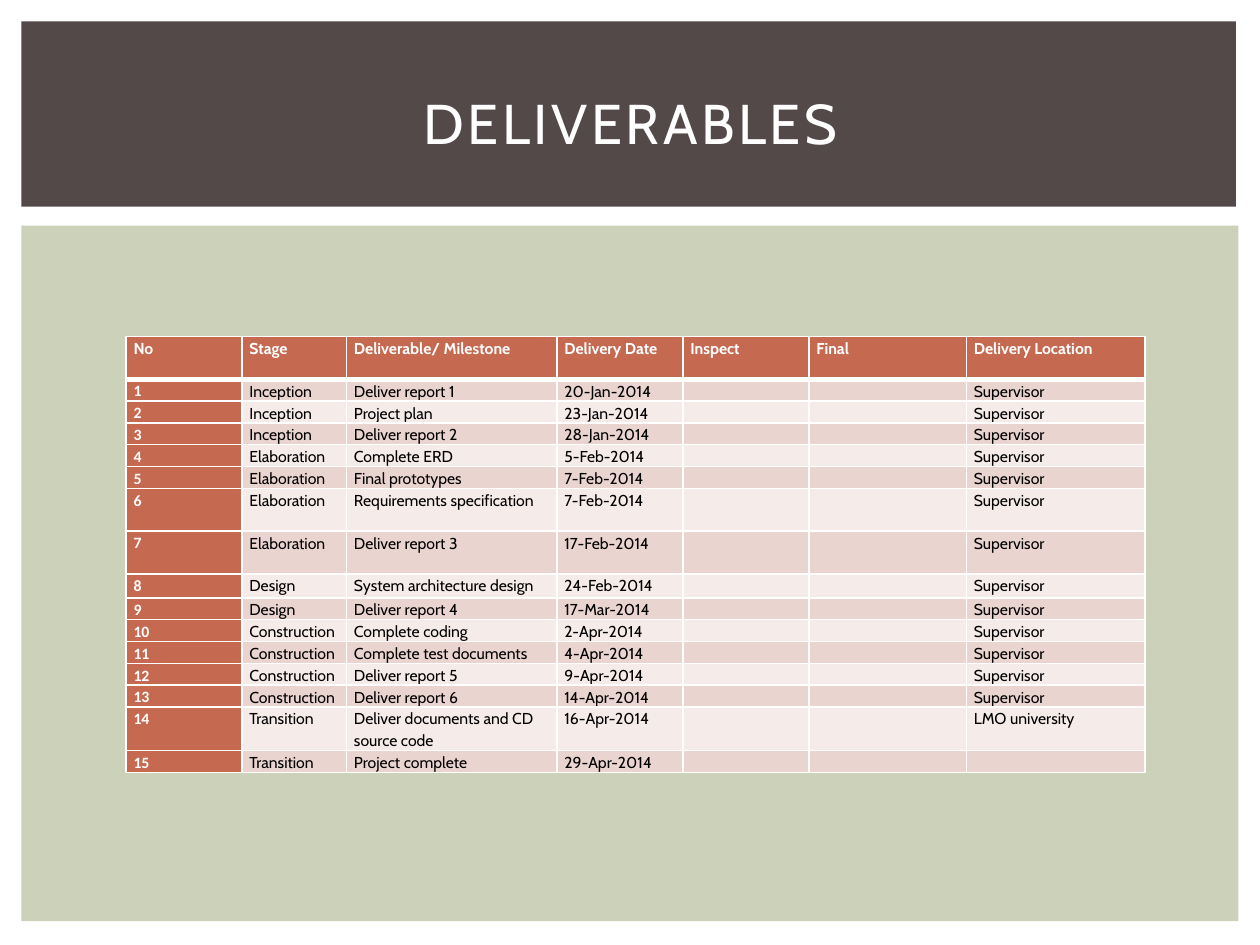
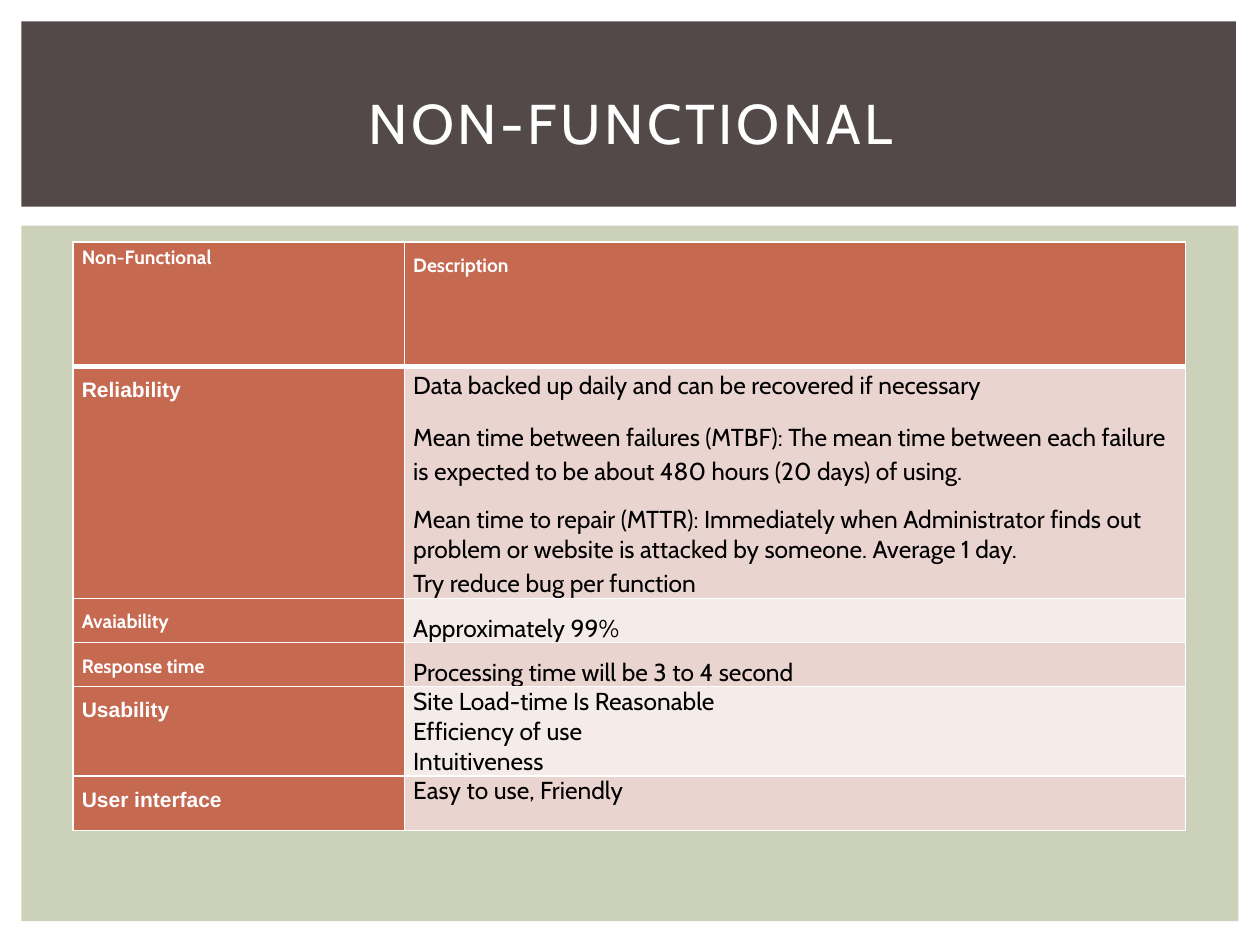
from dataclasses import dataclass

from lxml.etree import SubElement
from pptx import Presentation
from pptx.dml.color import RGBColor
from pptx.enum.shapes import MSO_SHAPE
from pptx.enum.text import MSO_ANCHOR, PP_ALIGN
from pptx.oxml.ns import qn
from pptx.util import Inches, Pt


@dataclass(frozen=True)
class Theme:
    white: str = "FFFFFF"
    black: str = "000000"
    title_band: str = "534949"
    body_panel: str = "CCD1B9"
    accent: str = "C66951"
    row_dark: str = "EAD4D0"
    row_light: str = "F5EBE9"
    font: str = "Cabin"
    number_font: str = "Calibri"
    label_font: str = "Arial"
    title_size: int = 32
    schedule_size: int = 9
    label_size: int = 11
    large_label_size: int = 12
    description_size: int = 14
    thin_border: int = 1
    header_border: int = 3


theme = Theme()


def add_titled_slide(presentation, title):
    slide = presentation.slides.add_slide(presentation.slide_layouts[6])
    bands = [
        (0.17, 1.79, 9.66, 5.52, theme.body_panel),
        (0.17, 0.17, 9.64, 1.47, theme.title_band),
    ]
    for left, top, width, height, color in bands:
        band = slide.shapes.add_shape(
            MSO_SHAPE.RECTANGLE, Inches(left), Inches(top), Inches(width), Inches(height)
        )
        band.shadow.inherit = False
        band.fill.solid()
        band.fill.fore_color.rgb = RGBColor.from_string(color)
        band.line.fill.background()
    title_box = slide.shapes.add_textbox(Inches(0.42), Inches(0.39), Inches(9.17), Inches(1.15))
    title_box.text_frame.word_wrap = True
    title_box.text_frame.vertical_anchor = MSO_ANCHOR.MIDDLE
    paragraph = title_box.text_frame.paragraphs[0]
    paragraph.alignment = PP_ALIGN.CENTER
    run = paragraph.add_run()
    run.text = title
    run.font.name = theme.font
    run.font.size = Pt(theme.title_size)
    run.font.color.rgb = RGBColor.from_string(theme.white)
    run._r.get_or_add_rPr().set("spc", "200")
    return slide


def add_filled_table(slide, left, top, column_widths, row_heights, margin, rows):
    table = slide.shapes.add_table(
        len(row_heights), len(column_widths), Inches(left), Inches(top),
        Inches(sum(column_widths)), Inches(sum(row_heights)),
    ).table
    table.first_row = False
    table.horz_banding = False
    for column, width in zip(table.columns, column_widths):
        column.width = Inches(width)
    for row, height in zip(table.rows, row_heights):
        row.height = Inches(height)
    for row_index, row in enumerate(rows):
        for column_index, (size, font, paragraphs) in enumerate(row):
            cell = table.cell(row_index, column_index)
            cell.margin_left = cell.margin_right = Inches(margin)
            cell.margin_top = cell.margin_bottom = 0
            accented = row_index == 0 or column_index == 0
            properties = cell._tc.get_or_add_tcPr()
            for side in ("lnL", "lnR", "lnT", "lnB"):
                under_header = (row_index, side) in ((0, "lnB"), (1, "lnT"))
                border_width = theme.header_border if under_header else theme.thin_border
                border = SubElement(properties, qn(f"a:{side}"), w=str(Pt(border_width)))
                border_fill = SubElement(border, qn("a:solidFill"))
                SubElement(border_fill, qn("a:srgbClr"), val=theme.white)
            band_color = theme.row_dark if row_index % 2 else theme.row_light
            cell.fill.solid()
            cell.fill.fore_color.rgb = RGBColor.from_string(theme.accent if accented else band_color)
            for index, (text, line_spacing, before, after) in enumerate(paragraphs):
                frame = cell.text_frame
                paragraph = frame.add_paragraph() if index else frame.paragraphs[0]
                if not text:
                    SubElement(paragraph._p, qn("a:endParaRPr"), sz=str(size * 100))
                    continue
                paragraph.line_spacing = line_spacing
                paragraph.space_before = Pt(before)
                paragraph.space_after = Pt(after)
                run = paragraph.add_run()
                run.text = text
                run.font.name = font
                run.font.size = Pt(size)
                run.font.bold = accented
                run.font.color.rgb = RGBColor.from_string(theme.white if accented else theme.black)
    return table


presentation = Presentation()
presentation.slide_width = Inches(10)
presentation.slide_height = Inches(7.5)

headings = ["No", "Stage", "Deliverable/ Milestone", "Delivery Date", "Inspect", "Final",
            "Delivery Location"]
milestones = [
    ("Inception", "Deliver report 1", "20-Jan-2014", "Supervisor"),
    ("Inception", "Project plan", "23-Jan-2014", "Supervisor"),
    ("Inception", "Deliver report 2", "28-Jan-2014", "Supervisor"),
    ("Elaboration", "Complete ERD", "5-Feb-2014", "Supervisor"),
    ("Elaboration", "Final prototypes", "7-Feb-2014", "Supervisor"),
    ("Elaboration", "Requirements specification", "7-Feb-2014", "Supervisor"),
    ("Elaboration", "Deliver report 3", "17-Feb-2014", "Supervisor"),
    ("Design", "System architecture design", "24-Feb-2014", "Supervisor"),
    ("Design", "Deliver report 4", "17-Mar-2014", "Supervisor"),
    ("Construction", "Complete coding", "2-Apr-2014", "Supervisor"),
    ("Construction", "Complete test documents", "4-Apr-2014", "Supervisor"),
    ("Construction", "Deliver report 5", "9-Apr-2014", "Supervisor"),
    ("Construction", "Deliver report 6", "14-Apr-2014", "Supervisor"),
    ("Transition", "Deliver documents and CD source code", "16-Apr-2014", "LMO university"),
    ("Transition", "Project complete", "29-Apr-2014", ""),
]
schedule_texts = [headings]
for number, (stage, milestone, date, location) in enumerate(milestones, start=1):
    schedule_texts.append([str(number), stage, milestone, date, "", "", location])
schedule_rows = []
for texts in schedule_texts:
    schedule_row = []
    for text in texts:
        font = theme.number_font if text.isdigit() else theme.font
        schedule_row.append((theme.schedule_size, font, [(text, 1.15, 0, 10)]))
    schedule_rows.append(schedule_row)
special_heights = {0: 0.34, 6: 0.34, 7: 0.34, 8: 0.19, 14: 0.34}
schedule_heights = [special_heights.get(index, 0.17) for index in range(len(schedule_rows))]

deliverables_slide = add_titled_slide(presentation, "DELIVERABLES")
schedule = add_filled_table(
    deliverables_slide, 1, 2.67, [0.92, 0.83, 1.67, 1, 1, 1.25, 1.42],
    schedule_heights, 0.06, schedule_rows,
)
schedule.cell(0, 6).text_frame.paragraphs[0].alignment = PP_ALIGN.JUSTIFY

small_label = (theme.label_size, theme.font)
large_label = (theme.large_label_size, theme.label_font)
description = (theme.description_size, theme.font)
requirement_rows = [
    [(*small_label, [("Non-Functional", 1.15, 2.2, 2.2)]),
     (*small_label, [("Description", 1.5, 0, 0)])],
    [(*large_label, [("Reliability", 1.5, 0, 0)]),
     (*description, [
         ("Data backed up daily and can be recovered if necessary", 1.15, 0, 10),
         ("Mean time between failures (MTBF): The mean time between each failure is expected "
          "to be about 480 hours (20 days) of using.", 1.15, 0, 10),
         ("Mean time to repair (MTTR): Immediately when Administrator finds out problem or "
          "website is attacked by someone. Average 1 day.", 1, 0, 0),
         ("Try reduce bug per function", 1.15, 0, 10),
     ])],
    [(*small_label, [("Avaiability", 1.5, 0, 0)]),
     (*description, [("Approximately 99%", 1.5, 0, 0)])],
    [(*small_label, [("Response time", 1.5, 0, 0)]),
     (*description, [("Processing time will be 3 to 4 second", 1.5, 0, 0)])],
    [(*large_label, [("Usability", 1.5, 0, 0)]),
     (*description, [
         ("Site Load-time Is Reasonable", 1, 0, 0),
         ("Efficiency of use", 1, 0, 0),
         ("Intuitiveness", 1, 0, 0),
     ])],
    [(*large_label, [("User interface", 1.5, 0, 0)]),
     (*description, [("Easy to use, Friendly", 1, 0, 0)])],
]
requirements_slide = add_titled_slide(presentation, "NON-FUNCTIONAL")
add_filled_table(
    requirements_slide, 0.58, 1.92, [2.63, 6.2],
    [0.99, 1.84, 0.35, 0.35, 0.71, 0.43], 0.07, requirement_rows,
)

presentation.save("out.pptx")
